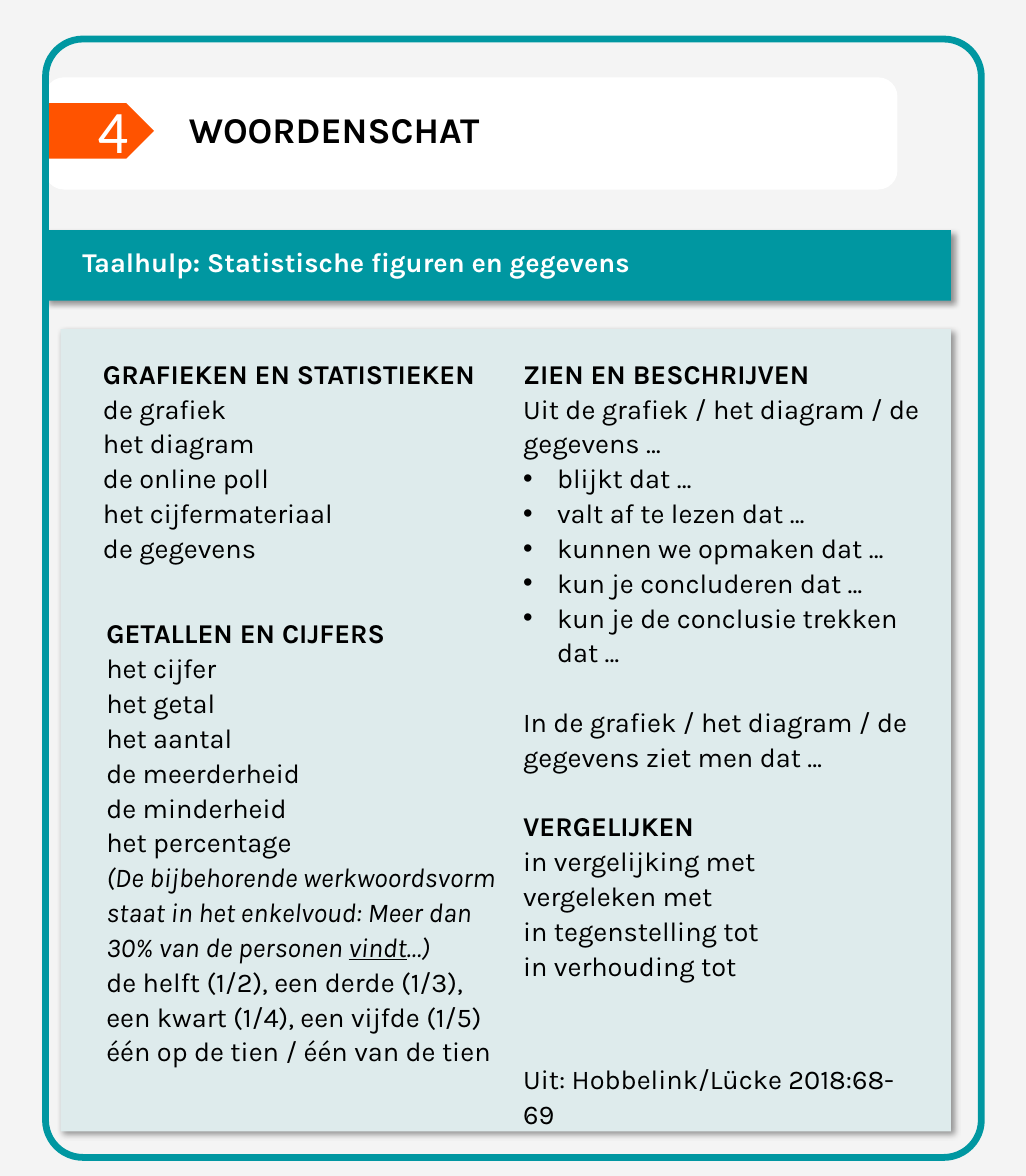
from lxml import etree
from pptx import Presentation
from pptx.dml.color import RGBColor
from pptx.enum import shapes, text
from pptx.oxml.ns import qn
from pptx.util import Pt

TEAL = RGBColor(0x00, 0x97, 0xA1)
MINT = RGBColor(0xDE, 0xEB, 0xEC)
ORANGE = RGBColor(0xFF, 0x53, 0x00)
GREY = RGBColor(0xF4, 0xF4, 0xF4)
WHITE = RGBColor(0xFF, 0xFF, 0xFF)
BLACK = RGBColor(0x00, 0x00, 0x00)

KIND = shapes.MSO_SHAPE
EDGE = 30.2
ROW = 23
INDENT = 22.5

GRAPHS = ["de grafiek", "het diagram", "de online poll", "het cijfermateriaal",
          "de gegevens"]
NUMBERS = ["het cijfer", "het getal", "het aantal", "de meerderheid",
           "de minderheid", "het percentage"]
NOTE = [("(De bijbehorende werkwoordsvorm staat in het enkelvoud: "
         "Meer dan 30% van de personen ", "i"), ("vindt", "iu"), ("…)", "i")]
PARTS = ["de helft (1/2), een derde (1/3), een kwart (1/4), een vijfde (1/5)",
         "één op de tien / één van de tien"]
VERBS = ["blijkt dat …", "valt af te lezen dat …", "kunnen we opmaken dat …",
         "kun je concluderen dat …", "kun je de conclusie trekken dat …"]
COMPARE = ["in vergelijking met", "vergeleken met", "in tegenstelling tot",
           "in verhouding tot"]


def add_form(slide, kind, box, fill=None, line=None, width=1):
    form = slide.shapes.add_shape(kind, *map(Pt, box))
    form.shadow.inherit = False
    if fill is None:
        form.fill.background()
    else:
        form.fill.solid()
        form.fill.fore_color.rgb = fill
    if line is None:
        form.line.fill.background()
    else:
        form.line.color.rgb = line
        form.line.width = Pt(width)
    return form


def add_shade(form):
    """Give the shape a soft black shadow at its lower right."""
    effects = form._element.spPr.find(qn("a:effectLst"))
    shade = etree.SubElement(effects, qn("a:outerShdw"), blurRad=str(Pt(4)),
                             dist=str(Pt(3)), dir="2700000", algn="tl",
                             rotWithShape="0")
    tint = etree.SubElement(shade, qn("a:srgbClr"), val="000000")
    etree.SubElement(tint, qn("a:alpha"), val="40000")


def add_box(slide, box):
    frame = slide.shapes.add_textbox(*map(Pt, box)).text_frame
    frame.word_wrap = True
    frame.auto_size = text.MSO_AUTO_SIZE.SHAPE_TO_FIT_TEXT
    return frame


def add_run(para, words, style="", size=18, color=BLACK, face="Karla"):
    """Add a run; style holds any of b (bold), i (italic), u (underline)."""
    run = para.add_run()
    run.text = words
    font = run.font
    font.name, font.size, font.color.rgb = face, Pt(size), color
    font.bold, font.italic, font.underline = (key in style for key in "biu")


def add_label(slide, box, words, **look):
    add_run(add_box(slide, box).paragraphs[0], words, **look)


def add_bullet(para):
    props = para._p.get_or_add_pPr()
    props.set("marL", str(Pt(INDENT)))
    props.set("indent", str(-Pt(INDENT)))
    etree.SubElement(props, qn("a:buFont"), typeface="Arial")
    etree.SubElement(props, qn("a:buChar"), char="•")


def add_line(frame, runs, gap=0, bullet=False):
    """Add a paragraph of (words, style) runs, with gap points above it."""
    first = frame.paragraphs[0]
    para = frame.add_paragraph() if first.runs else first
    if bullet:
        add_bullet(para)
    para.line_spacing = 1.07
    if gap:
        para.space_before = Pt(gap)
    for words, style in runs:
        add_run(para, words, style)


def add_list(frame, items, bullet=False):
    for item in items:
        add_line(frame, [(item, "")], bullet=bullet)


def add_head(frame, words, gap=0):
    add_line(frame, [(words, "b")], gap)


def fill_left(slide):
    frame = add_box(slide, (61.2, 231.8, 279.4, 145.4))
    add_head(frame, "GRAFIEKEN EN STATISTIEKEN")
    add_list(frame, GRAPHS)

    frame = add_box(slide, (63.4, 403.9, 277.2, 331.9))
    add_head(frame, "GETALLEN EN CIJFERS")
    add_list(frame, NUMBERS)
    add_line(frame, NOTE)
    add_list(frame, PARTS)


def fill_right(slide):
    frame = add_box(slide, (339.8, 231.8, 279.4, 501.8))
    add_head(frame, "ZIEN EN BESCHRIJVEN")
    add_list(frame, ["Uit de grafiek / het diagram / de gegevens …"])
    add_list(frame, VERBS, bullet=True)
    add_line(frame, [("In de grafiek / het diagram / de gegevens ziet men dat …", "")],
             ROW)
    add_head(frame, "VERGELIJKEN", ROW)
    add_list(frame, COMPARE)
    add_line(frame, [("Uit: Hobbelink/Lücke 2018:68-69", "")], 2 * ROW + 6)


def main():
    deck = Presentation()
    deck.slide_width, deck.slide_height = Pt(680.4), Pt(779.8)
    slide = deck.slides.add_slide(deck.slide_layouts[6])
    slide.background.fill.solid()
    slide.background.fill.fore_color.rgb = GREY

    add_shade(add_form(slide, KIND.RECTANGLE, (40.3, 218.2, 590.4, 532.1), MINT))
    add_shade(add_form(slide, KIND.RECTANGLE, (EDGE, 152.6, 600.5, 46.8), TEAL))
    add_form(slide, KIND.ROUNDED_RECTANGLE, (EDGE, 51.8, 564.5, 73.4), WHITE, WHITE)
    add_form(slide, KIND.PENTAGON, (EDGE, 68.4, 72, 36.7), ORANGE)
    add_label(slide, (57.6, 58.3, 33.1, 55.4), "4", size=40, color=WHITE,
              face="Calibri")
    add_label(slide, (118.1, 67.7, 389.5, 36), "WOORDENSCHAT", style="b", size=24)
    border = add_form(slide, KIND.ROUNDED_RECTANGLE, (EDGE, 25.9, 620.6, 741.6),
                      line=TEAL, width=4.5)
    border.adjustments[0] = 0.04
    add_label(slide, (47.5, 159.1, 498.2, 28.8),
              "Taalhulp: Statistische figuren en gegevens", style="b", color=WHITE)
    fill_left(slide)
    fill_right(slide)
    deck.save("out.pptx")


if __name__ == "__main__":
    main()
